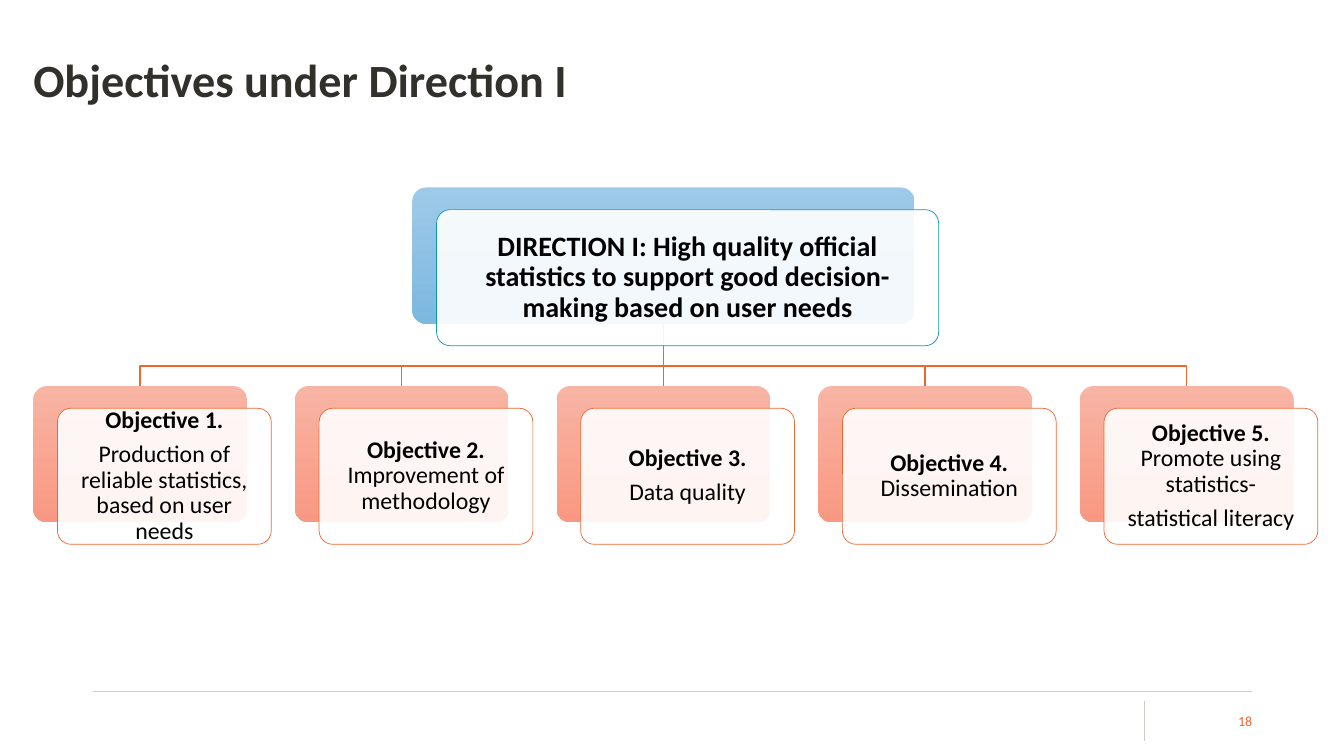
from pptx import Presentation
from pptx.dml.color import RGBColor
from pptx.enum.shapes import MSO_CONNECTOR as CONN, MSO_SHAPE as SHAPE
from pptx.enum.text import MSO_ANCHOR as ANCHOR, PP_ALIGN as ALIGN
from pptx.oxml.ns import qn
from pptx.util import Inches, Pt
from lxml.etree import SubElement

FONT = "Calibri"
ORANGE, BLUE, GREY = "EE672F", "0D96C5", "CECDC7"
CARD_H, CARD_W, ROOT_W = 1.35, 2.12, 4.98
OFFSET_X, OFFSET_Y = 0.24, 0.22
OBJECTIVES = [
    [[("Objective 1.", True)],
     [("Production of reliable statistics, based on user needs", False)]],
    [[("Objective 2. ", True), ("Improvement of methodology", False)]],
    [[("Objective 3.", True)], [("Data quality", False)]],
    [[("Objective 4. ", True), ("Dissemination", False)]],
    [[("Objective 5. ", True), ("Promote using statistics-", False)],
     [("statistical literacy", False)]],
]
DIRECTION = [[("DIRECTION I: High quality official statistics to support good "
               "decision-making based on user needs", True)]]


def rgb(value):
    return RGBColor.from_string(value)


def set_font(font, size, color):
    font.name, font.size = FONT, Pt(size)
    font.color.rgb = rgb(color)


def add_line(slide, x1, y1, x2, y2, color, width):
    line = slide.shapes.add_connector(
        CONN.STRAIGHT, Inches(x1), Inches(y1), Inches(x2), Inches(y2))
    line.line.color.rgb, line.line.width = rgb(color), Pt(width)
    SubElement(line._element.spPr, qn("a:effectLst"))
    return line


def add_branch(slide, x1, y1, x2, y2):
    bend = y2 - 0.2
    builder = slide.shapes.build_freeform(Inches(x1), Inches(y1))
    builder.add_line_segments(
        [(Inches(x), Inches(y)) for x, y in [(x1, bend), (x2, bend), (x2, y2)]],
        close=False)
    sp = builder.convert_to_shape()
    sp.shadow.inherit = False
    sp.fill.background()
    sp.line.color.rgb, sp.line.width = rgb(ORANGE), Pt(1)


def add_round_rect(slide, x, y, w):
    sp = slide.shapes.add_shape(
        SHAPE.ROUNDED_RECTANGLE, Inches(x), Inches(y), Inches(w), Inches(CARD_H))
    sp.adjustments[0] = 0.1
    sp.shadow.inherit = False
    return sp


def add_card(slide, x, y, w, paragraphs, size, gradient, outline):
    back = add_round_rect(slide, x, y, w)
    back.line.fill.background()
    back.fill.gradient()
    back.fill.gradient_angle = 270
    for stop, color in zip(back.fill.gradient_stops, gradient):
        stop.color.rgb = rgb(color)

    front = add_round_rect(slide, x + OFFSET_X, y + OFFSET_Y, w)
    front.fill.solid()
    front.fill.fore_color.rgb = rgb("FFFFFF")
    white = front._element.spPr.find(qn("a:solidFill"))[0]
    SubElement(white, qn("a:alpha"), val="90000")
    front.line.color.rgb, front.line.width = rgb(outline), Pt(0.5)

    tf = front.text_frame
    tf.word_wrap, tf.vertical_anchor = True, ANCHOR.MIDDLE
    tf.margin_left = tf.margin_right = Inches(0.07)
    tf.margin_top = tf.margin_bottom = Inches(0.07)
    for i, runs in enumerate(paragraphs):
        p = tf.paragraphs[0] if i == 0 else tf.add_paragraph()
        p.alignment, p.line_spacing = ALIGN.CENTER, 0.9
        p.space_after = Pt(0.35 * size)
        set_font(p.font, size, "000000")
        for text, bold in runs:
            r = p.add_run()
            r.text, r.font.bold = text, bold
    return back


def add_title(slide, x, y, w, h):
    title = slide.shapes.title
    title.left, title.top = Inches(x), Inches(y)
    title.width, title.height = Inches(w), Inches(h)
    tf = title.text_frame
    tf.text = "Objectives under Direction I"
    tf.word_wrap, tf.vertical_anchor = True, ANCHOR.BOTTOM
    tf.margin_left, tf.margin_bottom = 0, Inches(0.22)
    p = tf.paragraphs[0]
    p.alignment, p.line_spacing = ALIGN.LEFT, 0.9
    set_font(p.font, 33, "31302B")
    p.font.bold = True


def add_tree(slide, x, y, w):
    pitch = (w - OFFSET_X - CARD_W) / (len(OBJECTIVES) - 1)
    lefts = [x + i * pitch for i in range(len(OBJECTIVES))]
    center = x + (w - OFFSET_X) / 2
    root_bottom, row_top = y + CARD_H, y + 1.97
    middle = len(OBJECTIVES) // 2

    for i, left in enumerate(lefts):
        if i != middle:
            add_branch(slide, center, root_bottom, left + CARD_W / 2, row_top)
    trunk = add_line(slide, center, root_bottom, center, row_top, ORANGE, 1)

    root = add_card(slide, center - ROOT_W / 2, y, ROOT_W, DIRECTION, 20,
                    ("9ECAE9", "7CB8E0"), BLUE)
    cards = [add_card(slide, left, row_top, CARD_W, paragraphs, 17,
                      ("F8B4A4", "F99882"), ORANGE)
             for left, paragraphs in zip(lefts, OBJECTIVES)]
    trunk.begin_connect(root, 2)
    trunk.end_connect(cards[middle], 0)


def add_footer(slide, x, y, w):
    right = x + w
    add_line(slide, x, y, right, y, GREY, 0.5)
    add_line(slide, right - 1.07, y + 0.09, right - 1.07, y + 0.49, GREY, 0.5)
    box = slide.shapes.add_textbox(
        Inches(right - 0.95), Inches(y + 0.09), Inches(0.95), Inches(0.4))
    tf = box.text_frame
    tf.word_wrap, tf.vertical_anchor = True, ANCHOR.MIDDLE
    tf.margin_left = tf.margin_right = 0
    p = tf.paragraphs[0]
    p.text, p.alignment = "18", ALIGN.RIGHT
    set_font(p.font, 10, ORANGE)


def main():
    prs = Presentation()
    prs.slide_width, prs.slide_height = Inches(13.33), Inches(7.5)
    slide = prs.slides.add_slide(prs.slide_layouts[5])
    add_footer(slide, 0.92, 6.86, 11.5)
    add_title(slide, 0.33, -0.16, 10.47, 1.45)
    add_tree(slide, 0.33, 1.86, 12.74)
    prs.save("out.pptx")


if __name__ == "__main__":
    main()
